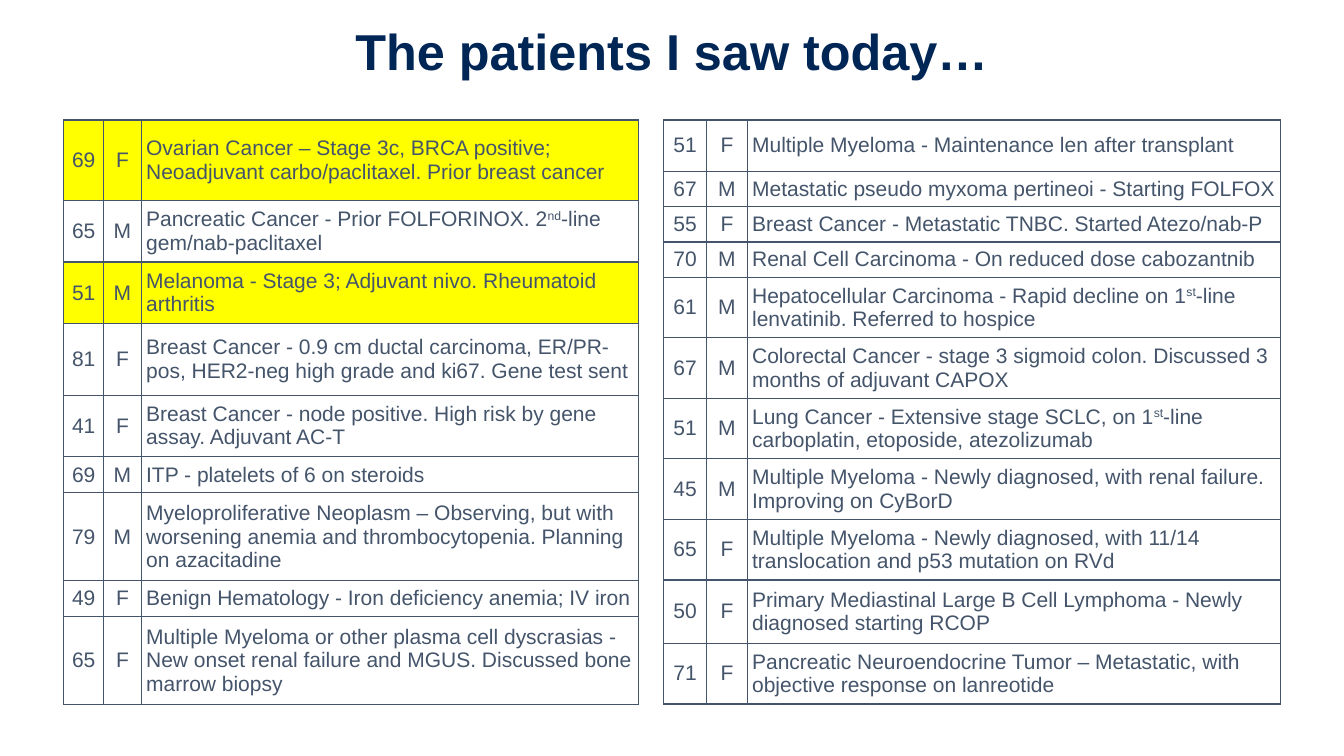
from lxml.etree import SubElement
from pptx import Presentation
from pptx.dml.color import RGBColor
from pptx.enum.text import MSO_ANCHOR, PP_ALIGN
from pptx.oxml.ns import qn
from pptx.util import Inches, Pt

COLORS = {"title": "002656", "slate": "44546A", "white": "FFFFFF", "highlight": "FFFF00"}

LEFT_PATIENTS = [
    (0.8, "69", "F", "Ovarian Cancer – Stage 3c, BRCA positive; Neoadjuvant carbo/paclitaxel. Prior breast cancer"),
    (0.61, "65", "M", "Pancreatic Cancer - Prior FOLFORINOX. 2^nd^-line gem/nab-paclitaxel"),
    (0.61, "51", "M", "Melanoma - Stage 3; Adjuvant nivo. Rheumatoid arthritis"),
    (0.71, "81", "F", "Breast Cancer - 0.9 cm ductal carcinoma, ER/PR-pos, HER2-neg high grade and ki67. Gene test sent"),
    (0.61, "41", "F", "Breast Cancer - node positive. High risk by gene assay. Adjuvant AC-T"),
    (0.36, "69", "M", "ITP - platelets of 6 on steroids"),
    (0.87, "79", "M", "Myeloproliferative Neoplasm – Observing, but with worsening anemia and "
                      "thrombocytopenia. Planning on azacitadine"),
    (0.36, "49", "F", "Benign Hematology - Iron deficiency anemia; IV iron"),
    (0.87, "65", "F", "Multiple Myeloma or other plasma cell dyscrasias - New onset renal failure and MGUS. "
                      "Discussed bone marrow biopsy"),
]
RIGHT_PATIENTS = [
    (0.51, "51", "F", "Multiple Myeloma - Maintenance len after transplant"),
    (0.32, "67", "M", "Metastatic pseudo myxoma pertineoi - Starting FOLFOX"),
    (0.28, "55", "F", "Breast Cancer - Metastatic TNBC. Started Atezo/nab-P"),
    (0.35, "70", "M", "Renal Cell Carcinoma - On reduced dose cabozantnib"),
    (0.55, "61", "M", "Hepatocellular Carcinoma - Rapid decline on 1^st^-line lenvatinib. Referred to hospice"),
    (0.55, "67", "M", "Colorectal Cancer - stage 3 sigmoid colon. Discussed 3 months of adjuvant CAPOX"),
    (0.55, "51", "M", "Lung Cancer - Extensive stage SCLC, on 1^st^-line carboplatin, etoposide, atezolizumab"),
    (0.55, "45", "M", "Multiple Myeloma - Newly diagnosed, with renal failure. Improving on CyBorD"),
    (0.55, "65", "F", "Multiple Myeloma - Newly diagnosed, with 11/14 translocation and p53 mutation on RVd"),
    (0.63, "50", "F", "Primary Mediastinal Large B Cell Lymphoma - Newly diagnosed starting RCOP"),
    (0.55, "71", "F", "Pancreatic Neuroendocrine Tumor – Metastatic, with objective response on lanreotide"),
]


def write_text(frame, text, size=15, color="slate", bold=False, align=PP_ALIGN.LEFT, spacing=None):
    """Fill a text frame, raising the parts between carets as superscript."""
    frame.word_wrap = True
    paragraph = frame.paragraphs[0]
    paragraph.alignment = align
    paragraph.line_spacing = spacing
    for index, part in enumerate(text.split("^")):
        run = paragraph.add_run()
        run.text = part
        run.font.name = "Arial"
        run.font.size = Pt(size)
        run.font.bold = bold
        run.font.color.rgb = RGBColor.from_string(COLORS[color])
        if index % 2:
            run.font._element.set("baseline", "30000")


def add_title(slide, text):
    """Add the centred heading."""
    heading = slide.shapes.add_textbox(Inches(1), Inches(0), Inches(11.33), Inches(1.08))
    heading.text_frame.vertical_anchor = MSO_ANCHOR.MIDDLE
    write_text(heading.text_frame, text, size=36, color="title", bold=True,
               align=PP_ALIGN.CENTER, spacing=0.9)


def style_cell(cell, fill):
    """Set the margins, fill and four borders of a cell."""
    cell.vertical_anchor = MSO_ANCHOR.MIDDLE
    cell.margin_left = cell.margin_right = Inches(0.05)
    cell.margin_top = cell.margin_bottom = Inches(0.05)
    properties = cell._tc.get_or_add_tcPr()
    for side in ("a:lnL", "a:lnR", "a:lnT", "a:lnB"):
        border = SubElement(properties, qn(side), w=str(Pt(1)))
        SubElement(SubElement(border, qn("a:solidFill")), qn("a:srgbClr"), val=COLORS["slate"])
    cell.fill.solid()
    cell.fill.fore_color.rgb = RGBColor.from_string(COLORS[fill])


def add_patient_table(slide, left, widths, patients, highlighted=()):
    """Add a table of age, sex and diagnosis, one patient a row."""
    height = sum(patient[0] for patient in patients)
    table = slide.shapes.add_table(len(patients), len(widths), Inches(left), Inches(1.19),
                                   Inches(sum(widths)), Inches(height)).table
    table.first_row = table.horz_banding = False
    for column, width in zip(table.columns, widths):
        column.width = Inches(width)
    for index, (row_height, *details) in enumerate(patients):
        table.rows[index].height = Inches(row_height)
        for position, detail in enumerate(details):
            cell = table.cell(index, position)
            style_cell(cell, "highlight" if index in highlighted else "white")
            write_text(cell.text_frame, detail,
                       align=PP_ALIGN.CENTER if position < 2 else PP_ALIGN.LEFT)


def main():
    """Build the slide and save it."""
    presentation = Presentation()
    presentation.slide_width = Inches(13.33)
    presentation.slide_height = Inches(7.5)
    slide = presentation.slides.add_slide(presentation.slide_layouts[6])
    add_title(slide, "The patients I saw today…")
    add_patient_table(slide, 0.63, (0.4, 0.37, 4.93), LEFT_PATIENTS, highlighted=(0, 2))
    add_patient_table(slide, 6.58, (0.43, 0.4, 5.29), RIGHT_PATIENTS)
    presentation.save("out.pptx")


if __name__ == "__main__":
    main()
